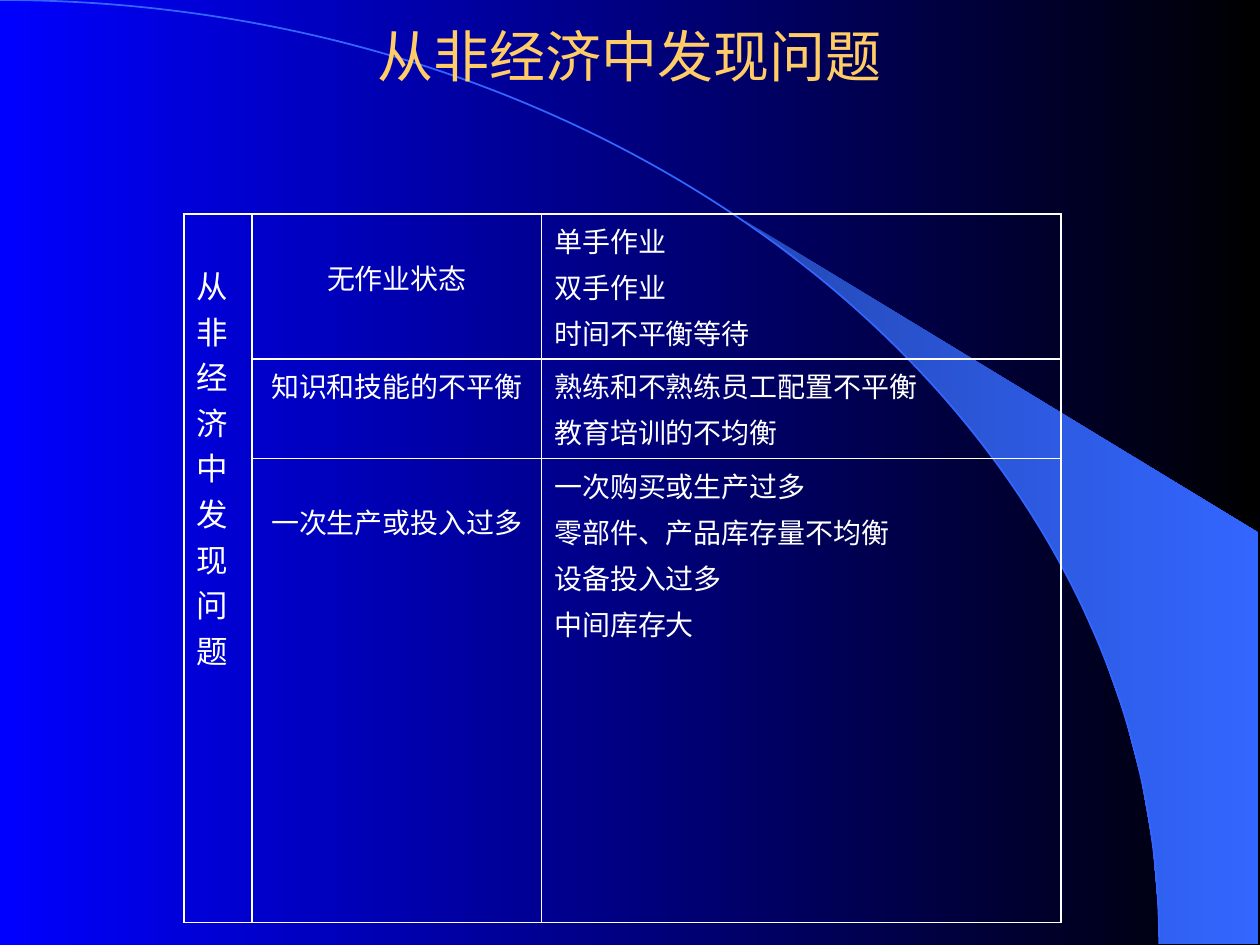
from math import cos, radians, sin

from lxml import etree
from pptx import Presentation
from pptx import util as u
from pptx.dml.color import RGBColor
from pptx.enum import text
from pptx.oxml.ns import qn

W, H = 10, 7.5
HUE = {"blue": "0000FF", "black": "000000", "deep": "2449B6",
       "sky": "3366FF", "gold": "FFCC66", "white": "FFFFFF"}
TITLE = "从非经济中发现问题"
COLS = [0.54, 2.3, 4.12]
ROWS = [  # height, state, top margin of the state, findings
    (1.15, "无作业状态", 0.34, ["单手作业", "双手作业", "时间不平衡等待"]),
    (0.79, "知识和技能的不平衡", 0.05,
     ["熟练和不熟练员工配置不平衡", "教育培训的不均衡"]),
    (3.68, "一次生产或投入过多", 0.34,
     ["一次购买或生产过多", "零部件、产品库存量不均衡", "设备投入过多", "中间库存大"]),
]


def blend(fill, left, right):
    """Fill from left to right with two colours."""
    fill.gradient()
    fill.gradient_angle = 0
    for stop, name in zip(fill.gradient_stops, (left, right)):
        stop.color.rgb = RGBColor.from_string(HUE[name])


def write(frame, lines, size, font, color, align):
    """Put each line in its own paragraph, with a fifth of its size between."""
    frame.word_wrap = True
    for i, line in enumerate(lines):
        para = frame.paragraphs[0] if i == 0 else frame.add_paragraph()
        para.alignment = align
        if i:
            para.space_before = u.Pt(size * 0.2)
        run = para.add_run()
        run.text = line
        run.font.size = u.Pt(size)
        run.font.name = font
        run.font.color.rgb = RGBColor.from_string(HUE[color])


prs = Presentation()
prs.slide_width, prs.slide_height = u.Inches(W), u.Inches(H)
slide = prs.slides.add_slide(prs.slide_layouts[6])
blend(slide.background.fill, "blue", "black")

# Beam between the lower part of a quarter ellipse and the right edge
RX, RY, EDGE = 0.92 * W, H - 0.01, W - 0.01
rim = [(RX * sin(radians(a)), RY * (1 - cos(radians(a)))) for a in range(40, 91, 4)]
rim += [(RX, RY), (EDGE, RY), (EDGE, 0.564 * H)]
pts = [(u.Inches(x), u.Inches(y)) for x, y in rim]
pen = slide.shapes.build_freeform(*pts[0], scale=1)
pen.add_line_segments(pts[1:])
beam = pen.convert_to_shape()
beam.shadow.inherit = False
blend(beam.fill, "deep", "sky")
beam.line.fill.background()

# The quarter ellipse itself: one segment, bent into a curve
wide, high = u.Inches(RX), u.Inches(RY)
pen = slide.shapes.build_freeform(0, 0, scale=1)
pen.add_line_segments([(wide, high)], close=False)
arc = pen.convert_to_shape()
arc.shadow.inherit = False
arc.fill.background()
arc.line.color.rgb = RGBColor.from_string(HUE["sky"])
arc.line.width = u.Pt(1)
bend = next(arc._element.iter(qn("a:lnTo")))
bend.tag = qn("a:cubicBezTo")
for i, (x, y) in enumerate([(0.55 * wide, 0), (wide, 0.45 * high)]):
    knot = etree.Element(qn("a:pt"), x=str(int(x)), y=str(int(y)))
    bend.insert(i, knot)

head = slide.shapes.add_textbox(*map(u.Inches, (0.075 * W, 0.1, 0.85 * W, 0.67)))
head.text_frame.vertical_anchor = text.MSO_ANCHOR.MIDDLE
write(head.text_frame, [TITLE], 32, "Arial", "gold", text.PP_ALIGN.CENTER)

box = [1.46, 1.7, sum(COLS), sum(row[0] for row in ROWS)]
table = slide.shapes.add_table(len(ROWS), len(COLS), *map(u.Inches, box)).table
table.first_row = table.horz_banding = False
for col, size in zip(table.columns, COLS):
    col.width = u.Inches(size)

for cell in table.iter_cells():
    props = cell._tc.get_or_add_tcPr()
    for side in ("a:lnL", "a:lnR", "a:lnT", "a:lnB"):
        edge = etree.SubElement(props, qn(side), w=str(u.Pt(1)))
        fill = etree.SubElement(edge, qn("a:solidFill"))
        etree.SubElement(fill, qn("a:srgbClr"), val=HUE["white"])
    cell.fill.background()

label = table.cell(0, 0)
label.merge(table.cell(len(ROWS) - 1, 0))
label.margin_top = u.Inches(0.38)
write(label.text_frame, [TITLE], 18, "Times New Roman", "white", text.PP_ALIGN.LEFT)

for r, (size, state, gap, finds) in enumerate(ROWS):
    table.rows[r].height = u.Inches(size)
    table.cell(r, 1).margin_top = u.Inches(gap)
    for c, lines, align in ((1, [state], text.PP_ALIGN.CENTER),
                            (2, finds, text.PP_ALIGN.LEFT)):
        write(table.cell(r, c).text_frame, lines, 16, "Times New Roman", "white", align)

prs.save("out.pptx")
